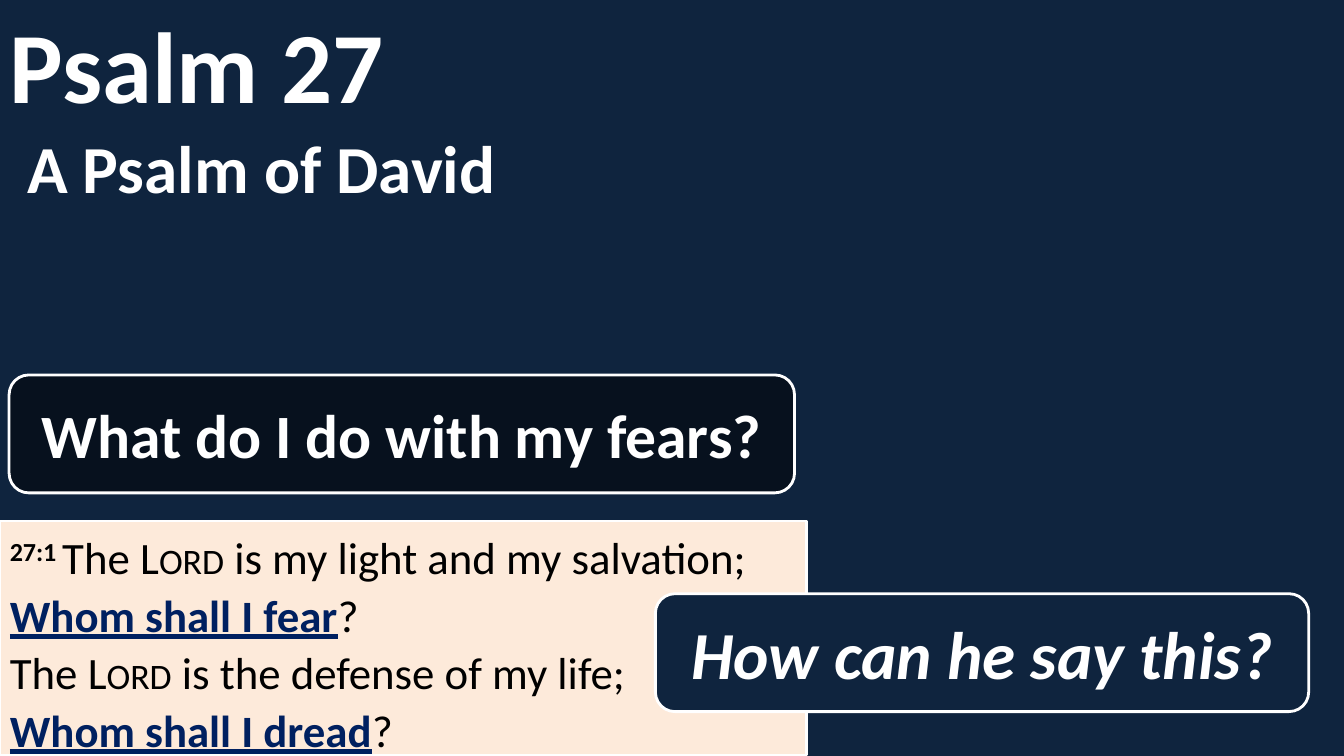
from lxml.etree import SubElement
from pptx import Presentation
from pptx.dml.color import RGBColor
from pptx.enum.shapes import MSO_SHAPE
from pptx.enum.text import MSO_ANCHOR, PP_ALIGN
from pptx.oxml.ns import qn
from pptx.util import Inches, Pt

COLORS = {"navy": "0F243E", "cream": "FDEADA", "white": "FFFFFF",
          "black": "000000", "blue": "002060"}

VERSE = [
    [("27:1 ", "num"), ("The ", ""), ("Lord", "caps"),
     (" is my light and my salvation;", "")],
    [("Whom shall I fear", "key"), ("?", "")],
    [("The ", ""), ("Lord", "caps"), (" is the defense of my life;", "")],
    [("Whom shall I dread", "key"), ("?", "")],
]


def color(name):
    """Return the named colour."""
    return RGBColor.from_string(COLORS[name])


def add_run(para, text, size, tint, bold=True):
    """Add one styled run and return it."""
    run = para.add_run()
    run.text = text
    font = run.font
    font.name, font.size, font.bold = "Calibri", Pt(size), bold
    font.color.rgb = color(tint)
    return run


def add_box(slide, kind, box, fill, width):
    """Add a filled, white-edged shape in the given box."""
    shape = slide.shapes.add_shape(kind, *map(Inches, box))
    shape.shadow.inherit = False
    shape.fill.solid()
    shape.fill.fore_color.rgb = color(fill)
    shape.line.color.rgb = color("white")
    shape.line.width = Pt(width)
    shape.text_frame.word_wrap = True
    return shape


def add_title(slide, box, text, size):
    """Add a bold heading, centred vertically in the box."""
    frame = slide.shapes.add_textbox(*map(Inches, box)).text_frame
    frame.word_wrap = True
    frame.vertical_anchor = MSO_ANCHOR.MIDDLE
    add_run(frame.paragraphs[0], text, size, "white")


def add_verse(slide, box):
    """Add the panel with the verse, line by line."""
    panel = add_box(slide, MSO_SHAPE.RECTANGLE, box, "cream", 1.5)
    frame = panel.text_frame
    frame.vertical_anchor = MSO_ANCHOR.TOP
    para = frame.paragraphs[0]
    para.alignment = PP_ALIGN.LEFT
    para.line_spacing = 1.07
    for index, line in enumerate(VERSE):
        if index:
            para.add_line_break()
        for text, style in line:
            tint = "blue" if style == "key" else "black"
            run = add_run(para, text, 32, tint, style in ("num", "key"))
            if style == "key":
                run.font.underline = True
            elif style == "num":
                run.font._element.set("baseline", "30000")
            elif style == "caps":
                run.font._element.set("cap", "small")


def add_ask(slide, box, text, size, fill, italic=False, alpha=None):
    """Add a rounded box that asks a question."""
    shape = add_box(slide, MSO_SHAPE.ROUNDED_RECTANGLE, box, fill, 2)
    if alpha is not None:
        tone = shape.fill._xPr.find(qn("a:solidFill"))[0]
        SubElement(tone, qn("a:alpha")).set("val", str(alpha * 1000))
    frame = shape.text_frame
    frame.vertical_anchor = MSO_ANCHOR.MIDDLE
    para = frame.paragraphs[0]
    para.alignment = PP_ALIGN.CENTER
    add_run(para, text, size, "white").font.italic = italic


def main():
    """Build the slide and save it."""
    deck = Presentation()
    deck.slide_width, deck.slide_height = Inches(13.33), Inches(7.5)
    slide = deck.slides.add_slide(deck.slide_layouts[6])
    slide.background.fill.solid()
    slide.background.fill.fore_color.rgb = color("navy")
    add_verse(slide, (0, 5.17, 8, 2.32))
    add_title(slide, (0, 0, 9.17, 1.25), "Psalm 27", 72)
    add_title(slide, (0.17, 1.03, 9.17, 1.25), "A Psalm of David", 48)
    add_ask(slide, (0.09, 3.72, 7.79, 1.17), "What do I do with my fears?",
            44, "black", alpha=50)
    add_ask(slide, (6.5, 5.89, 6.48, 1.17), "How can he say this?",
            48, "navy", italic=True)
    deck.save("out.pptx")


if __name__ == "__main__":
    main()
